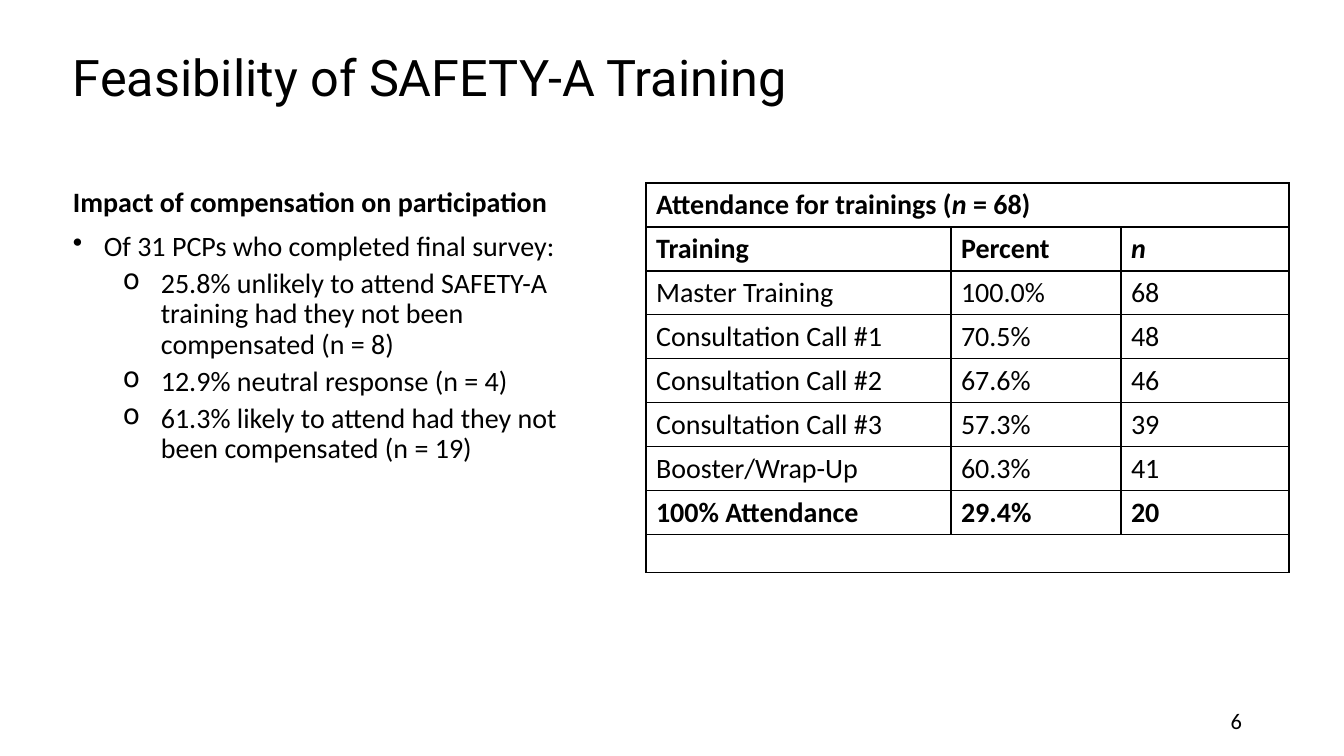
from lxml.etree import SubElement
from pptx import Presentation
from pptx.dml.color import RGBColor
from pptx.enum.text import MSO_ANCHOR, PP_ALIGN
from pptx.oxml import parse_xml
from pptx.oxml.ns import nsdecls, qn
from pptx.util import Pt

PX = 12192000 / 1344
BLACK = RGBColor(0, 0, 0)
WHITE = RGBColor(255, 255, 255)


def px(*lengths):
    """Turn pixel lengths into EMU."""
    return [round(length * PX) for length in lengths]


def add_span(para, text, **formats):
    span = para.add_run()
    span.text = text
    span.font.color.rgb = BLACK
    for name, value in ({"name": "Calibri", "size": Pt(20)} | formats).items():
        setattr(span.font, name, value)


deck = Presentation()
deck.slide_width, deck.slide_height = px(1344, 756)
page = deck.slides.add_slide(deck.slide_layouts[6])
page.background.fill.solid()
page.background.fill.fore_color.rgb = WHITE

# Title
title_box = page.shapes.add_textbox(*px(63, 48, 1218, 95))
title_box.text_frame.word_wrap = True
title = title_box.text_frame.paragraphs[0]
title.line_spacing = 0.9
add_span(title, "Feasibility of SAFETY-A Training", name="Roboto", size=Pt(36))

# Survey findings: text, bullet, left margin, hanging indent, space before
findings = [
    ("Impact of compensation on participation", None, 0, 0, 0),
    ("Of 31 PCPs who completed final survey:", "•", 31, 31, 10),
    ("25.8% unlikely to attend SAFETY-A training had they not been compensated (n = 8)",
     "o", 88, 38, 5),
    ("12.9% neutral response (n = 4)", "o", 88, 38, 5),
    ("61.3% likely to attend had they not been compensated (n = 19)", "o", 88, 38, 5),
]
findings_box = page.shapes.add_textbox(*px(63, 183, 547, 451))
findings_box.text_frame.word_wrap = True
for index, (text, bullet, margin, hanging, space) in enumerate(findings):
    frame = findings_box.text_frame
    para = frame.add_paragraph() if index else frame.paragraphs[0]
    para.line_spacing = 0.9
    para.space_before = Pt(space)
    if bullet:
        para.level = 1 if bullet == "o" else 0
        properties = para._p.get_or_add_pPr()
        left, first = px(margin, -hanging)
        properties.set("marL", str(left))
        properties.set("indent", str(first))
        SubElement(properties, qn("a:buChar"), char=bullet)
    add_span(para, text, bold=bullet is None)

# Page number
number_box = page.shapes.add_textbox(*px(950, 701, 302, 40))
number_box.text_frame.word_wrap = True
number_box.text_frame.vertical_anchor = MSO_ANCHOR.MIDDLE
number = number_box.text_frame.paragraphs[0]
number.alignment = PP_ALIGN.RIGHT
add_span(number, "6", size=Pt(16))

# Attendance table
attendance = [
    ("", "", ""),
    ("Training", "Percent", "n"),
    ("Master Training", "100.0%", "68"),
    ("Consultation Call #1", "70.5%", "48"),
    ("Consultation Call #2", "67.6%", "46"),
    ("Consultation Call #3", "57.3%", "39"),
    ("Booster/Wrap-Up", "60.3%", "41"),
    ("100% Attendance", "29.4%", "20"),
    ("", "", ""),
]
last_row = len(attendance) - 1
table = page.shapes.add_table(len(attendance), 3, *px(646, 183, 643, 394)).table
table.first_row = table.horz_banding = False
for column, width in zip(table.columns, px(305, 170, 168)):
    column.width = width
for row_index, texts in enumerate(attendance):
    table.rows[row_index].height = px(38 if row_index == last_row else 44)[0]
    for column_index, text in enumerate(texts):
        cell = table.cell(row_index, column_index)
        for side in "LRTB":
            cell._tc.get_or_add_tcPr().append(parse_xml(
                f'<a:ln{side} {nsdecls("a")} w="12700"><a:solidFill>'
                f'<a:srgbClr val="{BLACK}"/></a:solidFill></a:ln{side}>'))
        cell.fill.background()
        if row_index == last_row:
            cell.margin_top = cell.margin_bottom = 0
        if text:
            add_span(cell.text_frame.paragraphs[0], text,
                     bold=row_index in (1, last_row - 1), italic=text == "n")

for row_index in (0, last_row):
    table.cell(row_index, 0).merge(table.cell(row_index, 2))
heading = table.cell(0, 0).text_frame.paragraphs[0]
for text, italic in (("Attendance for trainings (", False), ("n ", True), ("= 68)", False)):
    add_span(heading, text, bold=True, italic=italic)

deck.save("out.pptx")
